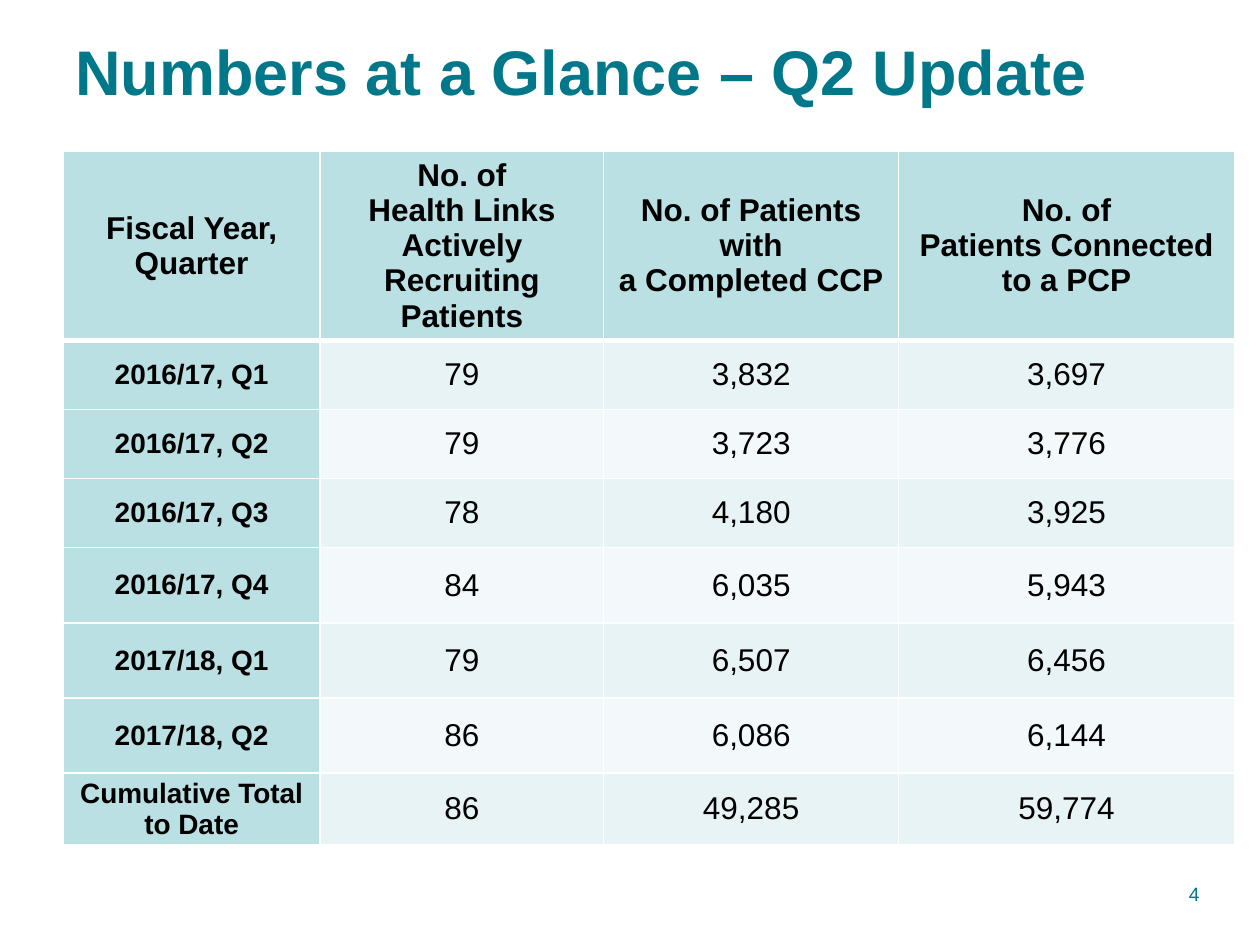
from lxml import etree
from pptx import Presentation
from pptx import util as u
from pptx.dml.color import RGBColor
from pptx.enum import text
from pptx.oxml.ns import qn

Pt = u.Pt
TEAL, BLACK, WHITE = "00788A", "000000", "FFFFFF"
HEAD, BANDS = "BBE0E3", ("E7F3F4", "F3F9FA")
CENTER, RIGHT = text.PP_ALIGN.CENTER, text.PP_ALIGN.RIGHT

COLUMNS = (147, 162, 168.5, 192)
ROW_HEIGHTS = (100, 39.5, 39.5, 39.5, 43, 43, 43, 41)
ROWS = [
    ("Fiscal Year, Quarter",
     "No. of\nHealth Links Actively Recruiting Patients",
     "No. of Patients with\na Completed CCP",
     "No. of\nPatients Connected to a PCP"),
    ("2016/17, Q1", "79", "3,832", "3,697"),
    ("2016/17, Q2", "79", "3,723", "3,776"),
    ("2016/17, Q3", "78", "4,180", "3,925"),
    ("2016/17, Q4", "84", "6,035", "5,943"),
    ("2017/18, Q1", "79", "6,507", "6,456"),
    ("2017/18, Q2", "86", "6,086", "6,144"),
    ("Cumulative Total to Date", "86", "49,285", "59,774"),
]


def rgb(color):
    return RGBColor.from_string(color)


def write(tf, content, size=18, color=BLACK, bold=False, align=None, spacing=None):
    """Fill a text frame, one paragraph per line of content."""
    tf.word_wrap = True
    for i, line in enumerate(content.split("\n")):
        p = tf.add_paragraph() if i else tf.paragraphs[0]
        p.alignment = align
        if spacing:
            p.line_spacing = Pt(spacing)
        r = p.add_run()
        r.text = line
        r.font.name, r.font.size, r.font.bold = "Arial", Pt(size), bold
        r.font.color.rgb = rgb(color)


def add_text(s, box, content, **fmt):
    sp = s.shapes.add_textbox(*map(Pt, box))
    sp.text_frame.vertical_anchor = text.MSO_ANCHOR.MIDDLE
    write(sp.text_frame, content, **fmt)


def set_borders(cell, **widths):
    """Draw white cell borders; they must come before the fill in tcPr."""
    tcPr = cell._tc.get_or_add_tcPr()
    for i, (side, width) in enumerate(widths.items()):
        ln = etree.Element(qn("a:ln" + side), w=str(Pt(width)))
        fill = etree.SubElement(ln, qn("a:solidFill"))
        etree.SubElement(fill, qn("a:srgbClr"), val=WHITE)
        tcPr.insert(i, ln)


def add_numbers_table(s, box):
    tbl = s.shapes.add_table(len(ROWS), len(COLUMNS), *map(Pt, box)).table
    for col, width in zip(tbl.columns, COLUMNS):
        col.width = Pt(width)
    for i, (row, height) in enumerate(zip(ROWS, ROW_HEIGHTS)):
        tbl.rows[i].height = Pt(height)
        for j, content in enumerate(row):
            cell = tbl.cell(i, j)
            heading = i == 0 or j == 0
            cell.margin_left = cell.margin_right = Pt(5)
            cell.margin_top = cell.margin_bottom = 0
            cell.vertical_anchor = text.MSO_ANCHOR.MIDDLE
            cell.fill.solid()
            cell.fill.fore_color.rgb = rgb(HEAD if heading else BANDS[(i - 1) % 2])
            # Heavier rule under the header row
            set_borders(cell, L=1, R=1, T=3 if i == 1 else 1, B=3 if i == 0 else 1)
            write(cell.text_frame, content, size=16 if i and j == 0 else 18,
                  bold=heading, align=CENTER)


def main():
    prs = Presentation()
    prs.slide_width, prs.slide_height = Pt(720), Pt(540)
    s = prs.slides.add_slide(prs.slide_layouts[6])
    # Title
    add_text(s, (36, 23, 660, 41), "Numbers at a Glance – Q2 Update",
             size=36, color=TEAL, bold=True, spacing=37.2)
    # Quarterly figures
    add_numbers_table(s, (36, 86.4, sum(COLUMNS), sum(ROW_HEIGHTS)))
    # Page number
    add_text(s, (608.4, 500.4, 84.2, 21), "4", size=11, color=TEAL, align=RIGHT)
    prs.save("out.pptx")


if __name__ == "__main__":
    main()
